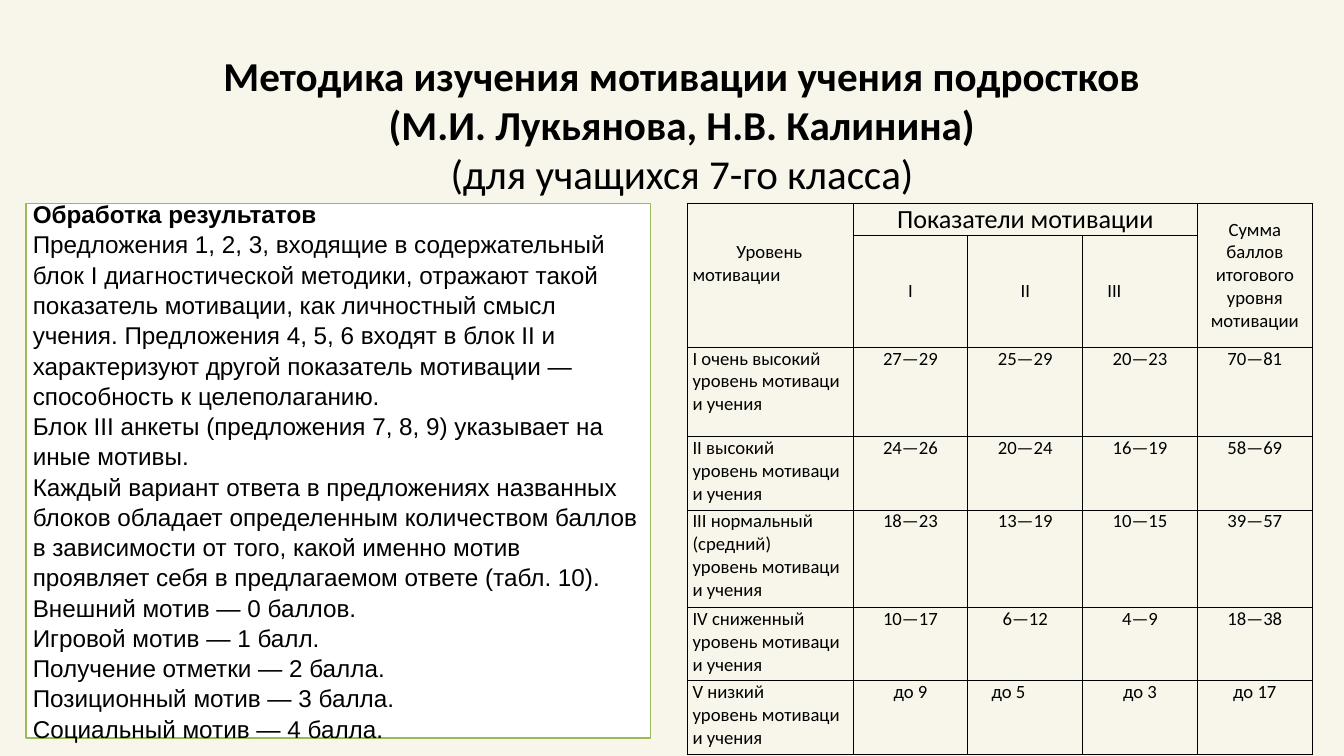
"""Build the slide on studying the learning motivation of teenagers."""
from lxml.etree import SubElement
from pptx import Presentation
from pptx.dml.color import RGBColor
from pptx.enum.shapes import MSO_SHAPE as Shape
from pptx.enum.text import MSO_ANCHOR as Anchor, PP_ALIGN as Align
from pptx.oxml.ns import qn
from pptx.util import Pt


def color(value):
    return RGBColor.from_string(value)


def write(frame, text, size, font="Calibri", align=Align.LEFT, bold_lines=(), spacing=None):
    frame.word_wrap = True
    for index, line in enumerate(text.split("\n")):
        paragraph = frame.paragraphs[0] if index == 0 else frame.add_paragraph()
        paragraph.alignment = align
        paragraph.line_spacing = spacing
        run = paragraph.add_run()
        run.text = line
        run.font.name = font
        run.font.size = Pt(size)
        run.font.bold = index in bold_lines
        run.font.color.rgb = color("000000")


presentation = Presentation()
presentation.slide_width, presentation.slide_height = Pt(1440), Pt(810)
slide = presentation.slides.add_slide(presentation.slide_layouts[6])
slide.background.fill.solid()
slide.background.fill.fore_color.rgb = color("F8F6EB")

title = slide.shapes.add_textbox(Pt(56), Pt(50.4), Pt(1350), Pt(167))
write(title.text_frame, """Методика изучения мотивации учения подростков
(М.И. Лукьянова, Н.В. Калинина)
(для учащихся 7-го класса)""", 44, align=Align.CENTER, bold_lines=(0, 1))

processing = slide.shapes.add_shape(Shape.RECTANGLE, Pt(28), Pt(218), Pt(669), Pt(572.5))
processing.shadow.inherit = False
processing.fill.solid()
processing.fill.fore_color.rgb = color("FFFFFF")
processing.line.color.rgb = color("9BBB59")
processing.line.width = Pt(2)
processing.text_frame.vertical_anchor = Anchor.MIDDLE
write(processing.text_frame, """Обработка результатов
Предложения 1, 2, 3, входящие в содержательный блок I диагностической методики, отражают такой показатель мотивации, как личностный смысл учения. Предложения 4, 5, 6 входят в блок II и характеризуют другой показатель мотивации — способность к целеполаганию.
Блок III анкеты (предложения 7, 8, 9) указывает на иные мотивы.
Каждый вариант ответа в предложениях названных блоков обладает определенным количеством баллов в зависимости от того, какой именно мотив проявляет себя в предлагаемом ответе (табл. 10).
Внешний мотив — 0 баллов.
Игровой мотив — 1 балл.
Получение отметки — 2 балла.
Позиционный мотив — 3 балла.
Социальный мотив — 4 балла.""", 26, font="Arial", bold_lines=(0,), spacing=1.04)

levels = [
    ("I очень высокий", "27—29", "25—29", "20—23", "70—81"),
    ("II высокий", "24—26", "20—24", "16—19", "58—69"),
    ("III нормальный (средний)", "18—23", "13—19", "10—15", "39—57"),
    ("IV сниженный", "10—17", "6—12", "4—9", "18—38"),
    ("V низкий", "до 9", "до 5", "до 3", "до 17"),
]
rows = [
    ("Уровень мотивации", "Показатели мотивации", "", "", "Сумма баллов итогового уровня мотивации"),
    ("", "I", "II", "III", ""),
]
rows += [(f"{level} уровень{chr(160)}мотивации учения", *scores) for level, *scores in levels]
column_widths = [177] + [123] * 4
row_heights = [34, 87, 96, 78.5, 104.5, 78.5, 78.5]
right_margins = {(1, 3): 60, (6, 2): 41}

table = slide.shapes.add_table(len(rows), len(column_widths), Pt(737), Pt(218),
                               Pt(sum(column_widths)), Pt(sum(row_heights))).table
table.first_row = table.horz_banding = False
for column, width in zip(table.columns, column_widths):
    column.width = Pt(width)
for row, height in zip(table.rows, row_heights):
    row.height = Pt(height)

for row_index, texts in enumerate(rows):
    for column_index, text in enumerate(texts):
        cell = table.cell(row_index, column_index)
        cell.margin_left = Pt(5)
        cell.margin_right = Pt(right_margins.get((row_index, column_index), 5))
        cell.margin_top = cell.margin_bottom = 0
        cell.vertical_anchor = Anchor.MIDDLE if row_index < 2 else Anchor.TOP
        if text:
            write(cell.text_frame, text, 28 if (row_index, column_index) == (0, 1) else 20,
                  align=Align.CENTER if column_index else Align.LEFT)
        properties = cell._tc.get_or_add_tcPr()
        for side in ("a:lnL", "a:lnR", "a:lnT", "a:lnB"):
            border = SubElement(properties, qn(side), w=str(Pt(1)))
            fill = SubElement(border, qn("a:solidFill"))
            SubElement(fill, qn("a:srgbClr"), val="000000")
        cell.fill.background()

level_header = table.cell(0, 0)
level_header.margin_bottom = Pt(24.5)
level_header.text_frame.paragraphs[0]._p.get_or_add_pPr().set("indent", str(Pt(47)))
level_header.merge(table.cell(1, 0))
table.cell(0, 1).merge(table.cell(0, 3))
table.cell(0, 4).merge(table.cell(1, 4))

presentation.save("out.pptx")
